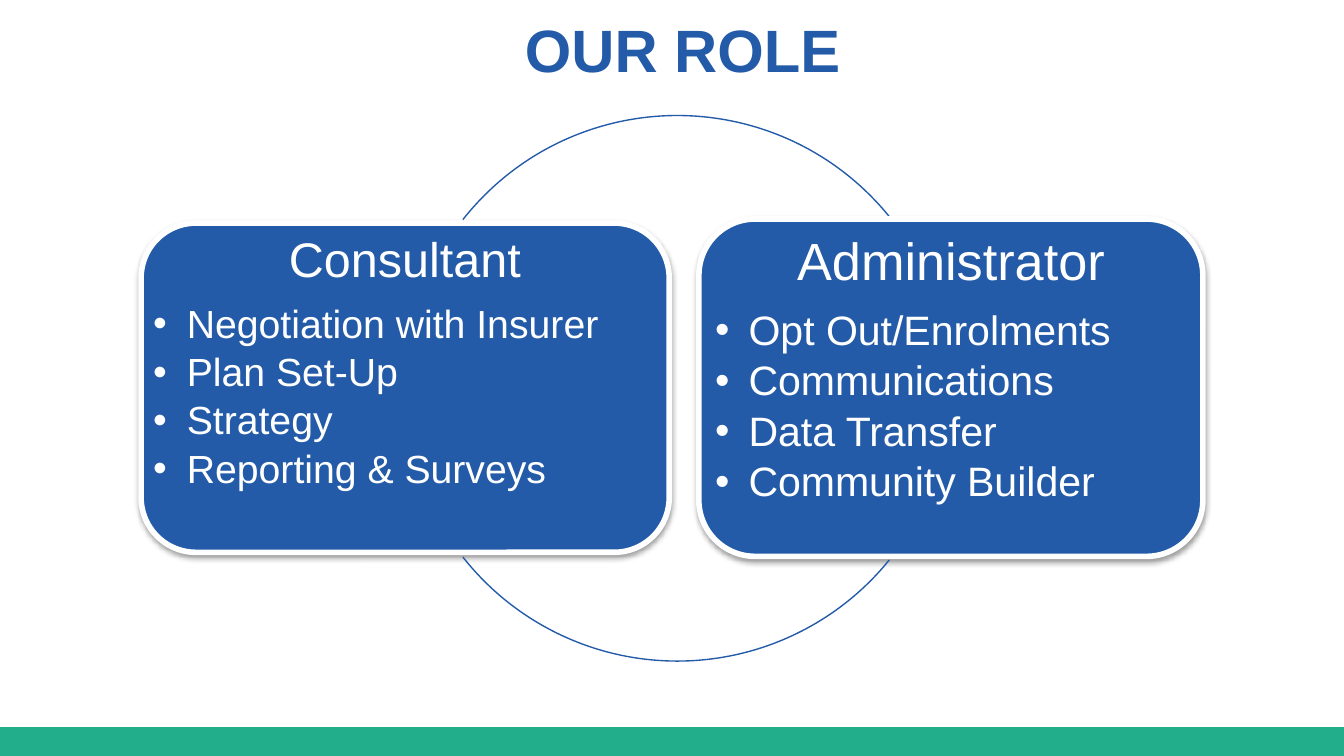
from dataclasses import dataclass

from lxml import etree
from pptx import Presentation
from pptx import util as u
from pptx.dml.color import RGBColor
from pptx.enum import shapes, text
from pptx.oxml import ns

# Square grid: the slide is 100 columns wide and 56.25 rows high.
CELL = u.Inches(0.1)
COLUMNS, ROWS = 100, 56.25


@dataclass(frozen=True)
class Theme:
    blue: RGBColor = RGBColor.from_string("235BA8")
    green: RGBColor = RGBColor.from_string("22AE8A")
    white: RGBColor = RGBColor.from_string("FFFFFF")
    font: str = "Arial"
    title_size: int = 32
    border_width: float = 3
    arc_width: float = 0.75
    # Space after a paragraph, as a share of its type size.
    heading_gap: float = 0.35
    item_gap: float = 0.15


@dataclass(frozen=True)
class Box:
    column: float
    row: float
    columns: float
    rows: float

    def lengths(self) -> list[int]:
        return [round(CELL * n) for n in (self.column, self.row, self.columns, self.rows)]


@dataclass(frozen=True)
class Card:
    box: Box
    inset: float
    heading: str
    heading_size: int
    items: tuple[str, ...]
    item_size: int


@dataclass(frozen=True)
class Arc:
    start: float
    end: float


THEME = Theme()
TITLE = Box(14.3, 1.5, 73, 6.1)
FOOTER = Box(0, 54.1, COLUMNS, ROWS - 54.1)
CIRCLE = Box(30.1, 8.6, 40.6, 40.6)
ARCS = (Arc(218.2, 321), Arc(39, 141.8))
CARDS = (
    Card(Box(10.5, 16.6, 39.3, 24.5), 0.9, "Consultant", 26,
         ("Negotiation with Insurer", "Plan Set-Up", "Strategy", "Reporting & Surveys"), 21),
    Card(Box(52, 16.3, 37.5, 25.1), 1.2, "Administrator", 28,
         ("Opt Out/Enrolments", "Communications", "Data Transfer", "Community Builder"), 22),
)


def add_filled_shape(slide, kind: shapes.MSO_SHAPE, box: Box, color: RGBColor):
    shape = slide.shapes.add_shape(kind, *box.lengths())
    shape.shadow.inherit = False
    shape.fill.solid()
    shape.fill.fore_color.rgb = color
    shape.line.fill.background()
    return shape


def add_drop_shadow(shape) -> None:
    effects = shape._element.spPr.find(ns.qn("a:effectLst"))
    shadow = etree.SubElement(effects, ns.qn("a:outerShdw"), blurRad="40000",
                              dist="20000", dir="5400000", rotWithShape="0")
    color = etree.SubElement(shadow, ns.qn("a:srgbClr"), val="000000")
    etree.SubElement(color, ns.qn("a:alpha"), val="38000")


def add_bullet(paragraph) -> None:
    properties = paragraph._p.get_or_add_pPr()
    properties.set("marL", str(u.Inches(0.25)))
    properties.set("indent", str(-u.Inches(0.25)))
    etree.SubElement(properties, ns.qn("a:buFont"), typeface=THEME.font)
    etree.SubElement(properties, ns.qn("a:buChar"), char="•")


def format_paragraph(paragraph, size: float, color: RGBColor, line_spacing: float,
                     gap: float = 0) -> None:
    paragraph.line_spacing = line_spacing
    paragraph.space_after = u.Pt(size * gap)
    paragraph.font.name = THEME.font
    paragraph.font.size = u.Pt(size)
    paragraph.font.color.rgb = color


def add_title(slide, words: str) -> None:
    title = slide.shapes.title
    title.left, title.top, title.width, title.height = TITLE.lengths()
    frame = title.text_frame
    frame.text = words
    frame.vertical_anchor = text.MSO_ANCHOR.TOP
    paragraph = frame.paragraphs[0]
    paragraph.alignment = text.PP_ALIGN.CENTER
    format_paragraph(paragraph, THEME.title_size, THEME.blue, 0.8)
    paragraph.font.bold = True


def add_arc(slide, arc: Arc) -> None:
    shape = slide.shapes.add_shape(shapes.MSO_SHAPE.ARC, *CIRCLE.lengths())
    shape.shadow.inherit = False
    # Angles count 60000 to the degree, adjustments 100000 to the unit.
    for index, degrees in enumerate((arc.start, arc.end)):
        shape.adjustments[index] = degrees * 0.6
    shape.fill.background()
    shape.line.color.rgb = THEME.blue
    shape.line.width = u.Pt(THEME.arc_width)


def add_card(slide, card: Card) -> None:
    panel = add_filled_shape(slide, shapes.MSO_SHAPE.ROUNDED_RECTANGLE, card.box, THEME.blue)
    panel.line.color.rgb = THEME.white
    panel.line.width = u.Pt(THEME.border_width)
    add_drop_shadow(panel)

    frame = slide.shapes.add_textbox(*card.box.lengths()).text_frame
    frame.word_wrap = True
    frame.margin_left = frame.margin_right = round(CELL * card.inset)
    frame.margin_top = frame.margin_bottom = round(CELL * card.inset)
    heading = frame.paragraphs[0]
    heading.text = card.heading
    heading.alignment = text.PP_ALIGN.CENTER
    format_paragraph(heading, card.heading_size, THEME.white, 0.9, THEME.heading_gap)
    for item in card.items:
        paragraph = frame.add_paragraph()
        paragraph.text = item
        paragraph.level = 1
        add_bullet(paragraph)
        format_paragraph(paragraph, card.item_size, THEME.white, 0.9, THEME.item_gap)


def main() -> None:
    presentation = Presentation()
    presentation.slide_width = CELL * COLUMNS
    presentation.slide_height = round(CELL * ROWS)
    slide = presentation.slides.add_slide(presentation.slide_layouts.get_by_name("Title Only"))
    add_filled_shape(slide, shapes.MSO_SHAPE.RECTANGLE, FOOTER, THEME.green)
    add_title(slide, "OUR ROLE")
    for card, arc in zip(CARDS, ARCS):
        add_card(slide, card)
        add_arc(slide, arc)
    presentation.save("out.pptx")


if __name__ == "__main__":
    main()
